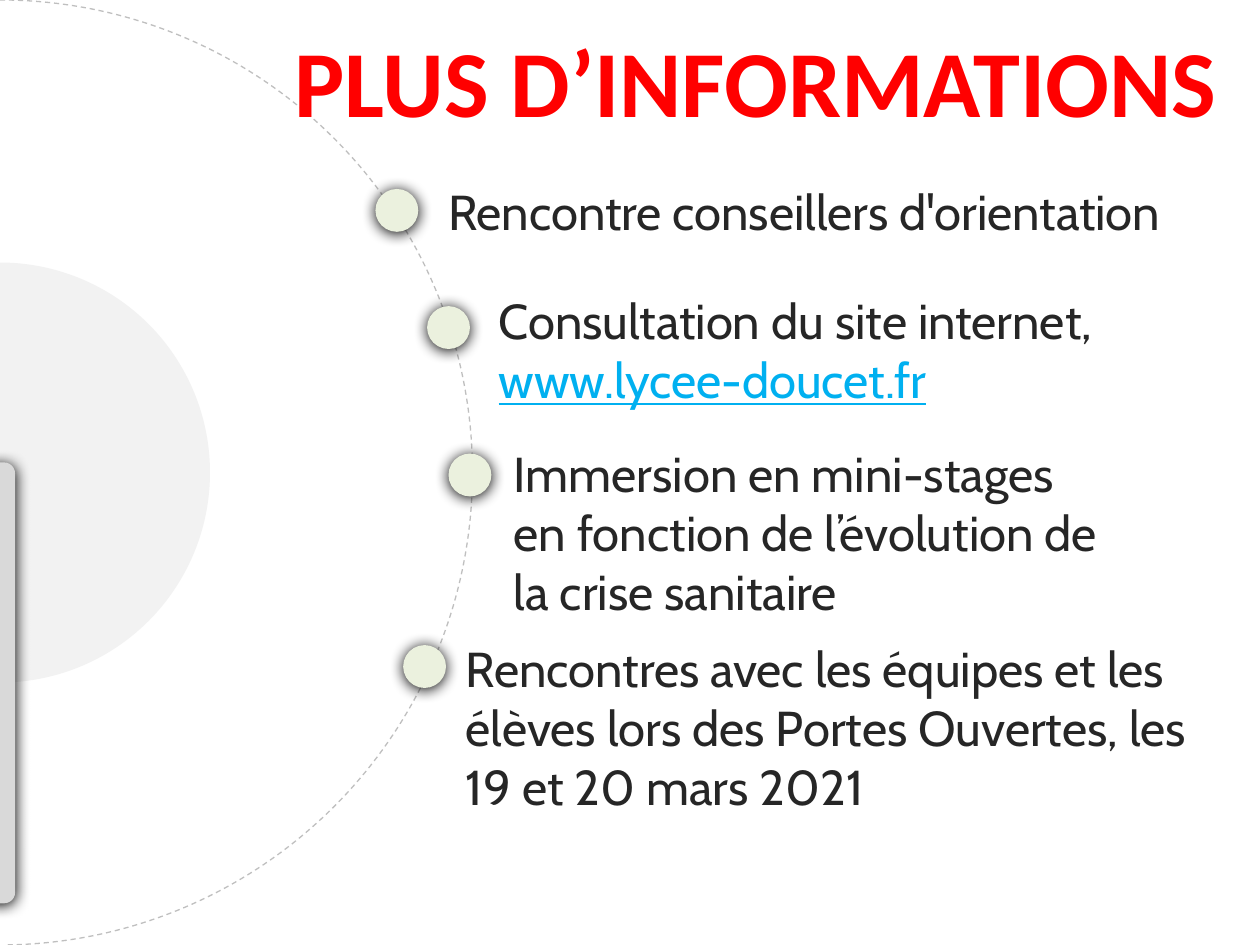
from lxml import etree
from pptx import Presentation
from pptx.dml.color import RGBColor
from pptx.enum.dml import MSO_LINE
from pptx.enum.shapes import MSO_SHAPE
from pptx.enum.text import MSO_ANCHOR, PP_ALIGN
from pptx.oxml.ns import qn
from pptx.util import Inches, Pt

ARC, OVAL, ROUND = MSO_SHAPE.ARC, MSO_SHAPE.OVAL, MSO_SHAPE.ROUNDED_RECTANGLE
DASH, TOP, CENTER, LEFT = MSO_LINE.DASH, MSO_ANCHOR.TOP, PP_ALIGN.CENTER, PP_ALIGN.LEFT
WIDE, HIGH = 10, 7.5
DOT = 0.34
COLORS = {"ring": "BFBFBF", "white": "FFFFFF", "core": "F2F2F2", "bar": "D9D9D9",
          "dot": "EBF1DE", "ink": "262626", "link": "00B0F0", "title": "FF0000"}
BODY = {"name": "Cabin", "size": Pt(28)}
HEAD = {"name": "Calibri", "size": Pt(54), "bold": True}

# Each item: dot corner, text box, paragraphs of (text, colour, format) runs
ITEMS = [
    ((2.98, 1.5), (3.46, 1.39, 6.27, 0.57),
     [[("Rencontre conseillers d'orientation", "ink", {})]]),
    ((3.39, 2.43), (3.86, 2.26, 5.93, 1.51),
     [[("Consultation du site internet, ", "ink", {}),
       ("www.lycee-doucet.fr", "link", {"underline": True})]]),
    ((3.56, 3.6), (3.98, 3.47, 4.95, 1.51),
     [[("Immersion en mini-stages en fonction de l’évolution de la crise sanitaire",
        "ink", {})]]),
    ((3.2, 5.12), (3.6, 5.02, 6.3, 1.51),
     [[("Rencontres avec les équipes et les élèves lors des Portes Ouvertes, les",
        "ink", {})],
      [("19 et 20 mars 2021", "ink", {})]]),
]


def tint(name):
    return RGBColor.from_string(COLORS[name])


def glow(shape):
    """Soft dark shadow just below the shape."""
    shape.shadow.inherit = False
    effects = shape._element.spPr.find(qn("a:effectLst"))
    shade = etree.SubElement(effects, qn("a:outerShdw"), blurRad=str(Pt(8.5)),
                             dist=str(Pt(1)), dir="5400000", rotWithShape="0")
    etree.SubElement(shade, qn("a:srgbClr"), val="000000")


def form(slide, kind, box, fill, adjust=()):
    shape = slide.shapes.add_shape(kind, *map(Inches, box))
    shape.shadow.inherit = False
    shape.fill.solid()
    shape.fill.fore_color.rgb = tint(fill)
    shape.line.fill.background()
    for i, value in enumerate(adjust):
        shape.adjustments[i] = value
    return shape


def label(slide, box, paras, base, align=LEFT, wrap=True):
    frame = slide.shapes.add_textbox(*map(Inches, box)).text_frame
    frame.word_wrap = wrap
    frame.vertical_anchor = TOP
    for i, parts in enumerate(paras):
        para = frame.add_paragraph() if i else frame.paragraphs[0]
        para.alignment = align
        for text, color, extra in parts:
            run = para.add_run()
            run.text = text
            for key, value in {**base, **extra}.items():
                setattr(run.font, key, value)
            run.font.color.rgb = tint(color)


def half(slide, size, fill, end):
    """Half disc centred on the left edge, at mid height."""
    box = (-size / 2, (HIGH - size) / 2, size, size)
    return form(slide, ARC, box, fill, (162, end))


def wheel(slide):
    # Dashed ring as high as the slide
    ring = half(slide, HIGH, "white", 53.71)
    ring.line.color.rgb = tint("ring")
    ring.line.width = Pt(0.75)
    ring.line.dash_style = DASH
    # Inner disc and edge bar
    half(slide, HIGH * 4 / 9, "core", 53.6)
    glow(form(slide, ROUND, (-0.13, 3.67, 0.25, 3.5), "bar", (0.35,)))


def points(slide):
    for corner, box, paras in ITEMS:
        label(slide, box, paras, BODY)
        glow(form(slide, OVAL, (*corner, DOT, DOT), "dot"))


def title(slide, box):
    label(slide, box, [[("PLUS D’INFORMATIONS", "title", {})]], HEAD, CENTER, False)


def main():
    deck = Presentation()
    deck.slide_width, deck.slide_height = Inches(WIDE), Inches(HIGH)
    slide = deck.slides.add_slide(deck.slide_layouts[6])
    wheel(slide)
    points(slide)
    title(slide, (0.22 * WIDE, 0.13, 0.76 * WIDE, 1.01))
    deck.save("out.pptx")


if __name__ == "__main__":
    main()
